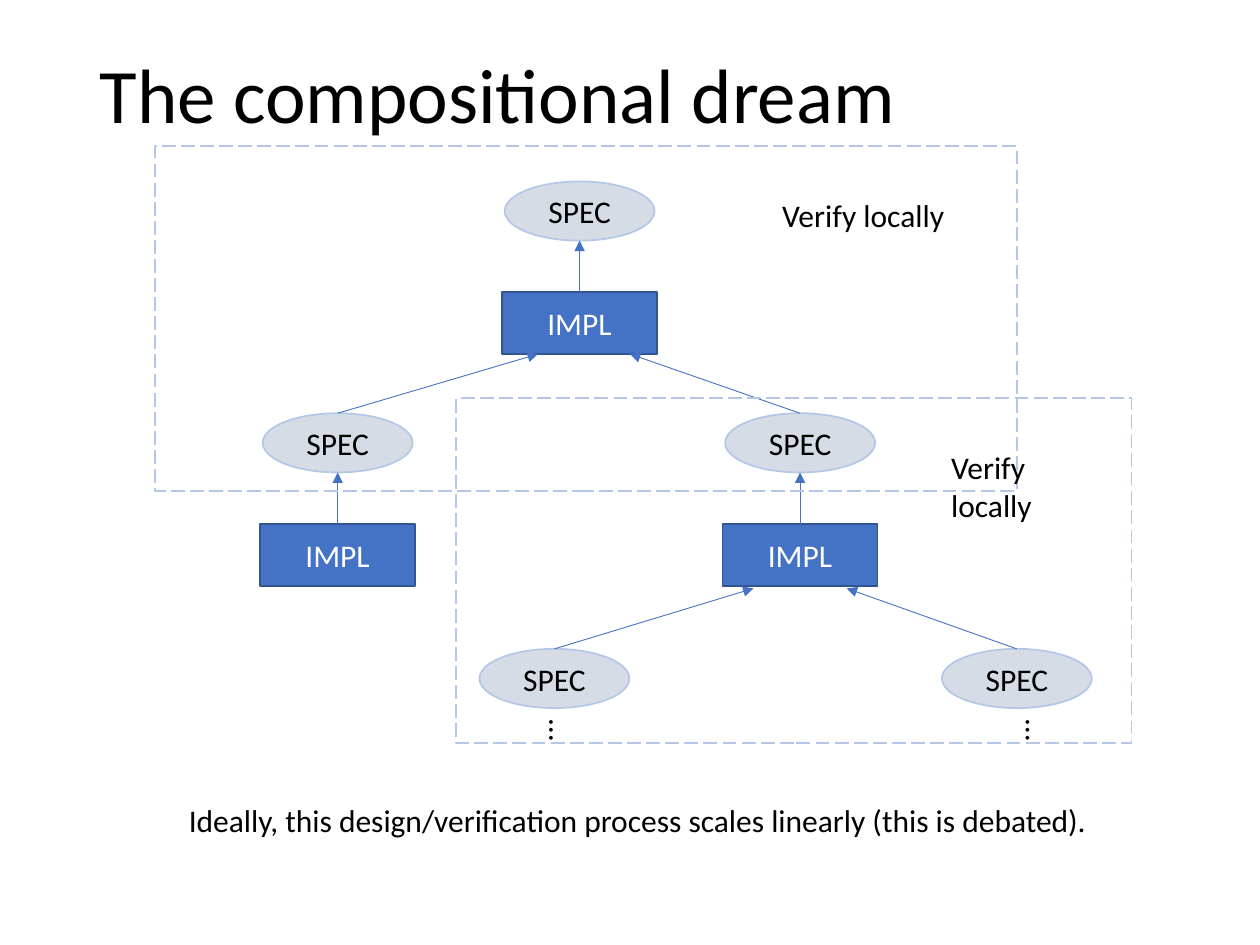
import dataclasses

import lxml.etree
import pptx
import pptx.dml.color
import pptx.enum.dml
import pptx.enum.shapes
import pptx.enum.text
import pptx.oxml.ns
import pptx.util

Inches = pptx.util.Inches
SHAPE = pptx.enum.shapes.MSO_SHAPE
ANCHOR = pptx.enum.text.MSO_ANCHOR
ALIGN = pptx.enum.text.PP_ALIGN


@dataclasses.dataclass(frozen=True)
class Theme:
    font: str = "Calibri"
    title_size: int = 44
    body_size: int = 18
    ink: str = "000000"
    paper: str = "FFFFFF"
    spec_fill: str = "D6DCE5"
    pale_line: str = "B4C7E7"
    impl_fill: str = "4472C4"
    impl_line: str = "325491"
    arrow: str = "4472C4"


THEME = Theme()
SPEC_W, SPEC_H = 1.19, 0.47
IMPL_W, IMPL_H = 1.23, 0.49
IMPL_DROP = 0.88


def rgb(value):
    return pptx.dml.color.RGBColor.from_string(value)


def add_run(p, text, size=THEME.body_size, color=THEME.ink):
    r = p.add_run()
    r.text = text
    r.font.name = THEME.font
    r.font.size = pptx.util.Pt(size)
    r.font.color.rgb = rgb(color)


def add_title(s, box, text):
    sp = s.shapes.title
    sp.left, sp.top, sp.width, sp.height = map(Inches, box)
    tf = sp.text_frame
    tf.vertical_anchor = ANCHOR.MIDDLE
    p = tf.paragraphs[0]
    p.alignment = ALIGN.LEFT
    p.line_spacing = 0.9
    add_run(p, text, THEME.title_size)


def add_label(shapes, box, text, wrap=False, rotation=0):
    sp = shapes.add_textbox(*map(Inches, box))
    sp.rotation = rotation
    tf = sp.text_frame
    tf.word_wrap = wrap
    add_run(tf.paragraphs[0], text)


def add_block(shapes, kind, box, line, fill=None):
    sp = shapes.add_shape(kind, *map(Inches, box))
    sp.shadow.inherit = False
    if fill:
        sp.fill.solid()
        sp.fill.fore_color.rgb = rgb(fill)
    else:
        sp.fill.background()
    sp.line.color.rgb = rgb(line)
    sp.line.width = pptx.util.Pt(1)
    return sp


def add_node(s, kind, box, text, fill, line, color):
    tf = add_block(s.shapes, kind, box, line, fill).text_frame
    tf.vertical_anchor = ANCHOR.MIDDLE
    tf.word_wrap = False
    p = tf.paragraphs[0]
    p.alignment = ALIGN.CENTER
    add_run(p, text, color=color)


def add_arrow(s, start, end):
    c = s.shapes.add_connector(
        pptx.enum.shapes.MSO_CONNECTOR.STRAIGHT, *map(Inches, start + end))
    c.line.color.rgb = rgb(THEME.arrow)
    c.line.width = pptx.util.Pt(0.5)
    qn = pptx.oxml.ns.qn
    lxml.etree.SubElement(c.line._get_or_add_ln(), qn("a:tailEnd"), type="triangle")
    lxml.etree.SubElement(c._element.spPr, qn("a:effectLst"))


def add_spec(s, cx, top):
    add_node(s, SHAPE.OVAL, (cx - SPEC_W / 2, top, SPEC_W, SPEC_H), "SPEC",
             THEME.spec_fill, THEME.pale_line, THEME.ink)


def add_component(s, cx, top):
    add_spec(s, cx, top)
    impl_top = top + IMPL_DROP
    add_node(s, SHAPE.RECTANGLE, (cx - IMPL_W / 2, impl_top, IMPL_W, IMPL_H), "IMPL",
             THEME.impl_fill, THEME.impl_line, THEME.paper)
    add_arrow(s, (cx, impl_top), (cx, top + SPEC_H))


def add_tree(s, left, top):
    root, low_left, low_right = left + 3.37, left + 1.45, left + 5.12
    leaf_left, leaf_right = left + 3.17, left + 6.84
    mid_top, leaf_top = top + 1.84, top + 3.71

    add_component(s, root, top)
    for cx in (low_left, low_right):
        add_component(s, cx, mid_top)
    for cx in (leaf_left, leaf_right):
        add_spec(s, cx, leaf_top)

    branches = [(low_left, low_right, mid_top, root - 0.33, root + 0.4, 0.47),
                (leaf_left, leaf_right, leaf_top, low_right - 0.37, low_right + 0.37, 0.48)]
    for x1, x2, y, end1, end2, rise in branches:
        add_arrow(s, (x1, y), (end1, y - rise))
        add_arrow(s, (x2, y), (end2, y - rise))

    for x in (leaf_left - 0.13, leaf_right - 0.02):
        add_label(s.shapes, (x, leaf_top + 0.45, 0.38, 0.4), "…", rotation=90)


def add_scope(s, box, label_dx, label_w, wrap):
    left, top = box[:2]
    group = s.shapes.add_group_shape()
    sp = add_block(group.shapes, SHAPE.RECTANGLE, box, THEME.pale_line)
    sp.line.dash_style = pptx.enum.dml.MSO_LINE.LONG_DASH
    add_label(group.shapes, (left + label_dx, top + 0.35, label_w, 0.4),
              "Verify locally", wrap)


def main():
    prs = pptx.Presentation()
    prs.slide_width, prs.slide_height = Inches(10), Inches(7.5)
    s = prs.slides.add_slide(prs.slide_layouts[5])
    add_title(s, (0.69, 0.4, 8.62, 0.76), "The compositional dream")
    add_tree(s, 1.23, 1.44)
    add_scope(s, (1.23, 1.16, 6.84, 2.74), 4.88, 1.5, False)
    add_scope(s, (3.62, 3.16, 5.36, 2.74), 3.83, 1.18, True)
    add_label(s.shapes, (1.4, 6.31, 7.35, 0.4),
              "Ideally, this design/verification process scales linearly (this is debated).")
    prs.save("out.pptx")


if __name__ == "__main__":
    main()
